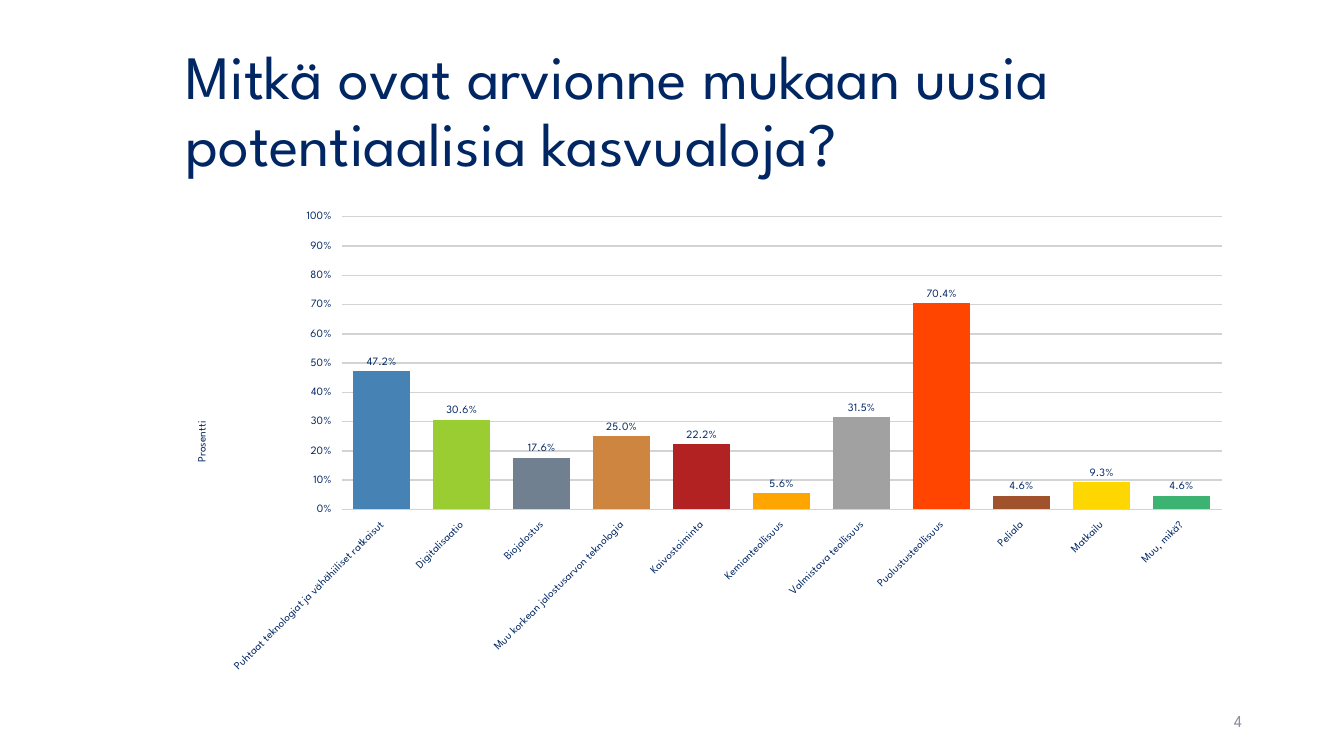
from pptx import Presentation
from pptx.chart.data import CategoryChartData
from pptx.dml.color import RGBColor
from pptx.enum.chart import XL_CHART_TYPE, XL_LABEL_POSITION
from pptx.enum.text import MSO_ANCHOR, PP_ALIGN
from pptx.util import Emu, Pt

COLUMNS = XL_CHART_TYPE.COLUMN_CLUSTERED
OUTSIDE = XL_LABEL_POSITION.OUTSIDE_END
MIDDLE = MSO_ANCHOR.MIDDLE
LEFT, RIGHT = PP_ALIGN.LEFT, PP_ALIGN.RIGHT

NAVY = RGBColor(0x00, 0x26, 0x63)
GREY = RGBColor(0x8C, 0x8E, 0x9F)
GRID = RGBColor(0xD3, 0xD3, 0xD3)

GROWTH_SECTORS = [
    ("Puhtaat teknologiat ja vähähiiliset ratkaisut", 0.472, RGBColor(0x46, 0x82, 0xB4)),
    ("Digitalisaatio", 0.306, RGBColor(0x9A, 0xCD, 0x32)),
    ("Biojalostus", 0.176, RGBColor(0x70, 0x80, 0x90)),
    ("Muu korkean jalostusarvon teknologia", 0.25, RGBColor(0xCD, 0x85, 0x3F)),
    ("Kaivostoiminta", 0.222, RGBColor(0xB2, 0x22, 0x22)),
    ("Kemianteollisuus", 0.056, RGBColor(0xFF, 0xA5, 0x00)),
    ("Valmistava teollisuus", 0.315, RGBColor(0xA1, 0xA1, 0xA1)),
    ("Puolustusteollisuus", 0.704, RGBColor(0xFF, 0x45, 0x00)),
    ("Peliala", 0.046, RGBColor(0xA0, 0x52, 0x2D)),
    ("Matkailu", 0.093, RGBColor(0xFF, 0xD7, 0x00)),
    ("Muu, mikä?", 0.046, RGBColor(0x3C, 0xB3, 0x71)),
]


def px(length):
    return Emu(round(length * 914400 / 100.8))


class SlideBuilder:
    font_name = "League Spartan"

    def __init__(self, deck):
        self.slide = deck.slides.add_slide(deck.slide_layouts[6])

    def style(self, font, size, color=NAVY):
        font.name = self.font_name
        font.size = Pt(size)
        font.bold = False
        font.color.rgb = color

    def text(self, left, top, width, height, words, size, color=NAVY, align=LEFT, spacing=1.0):
        box = self.slide.shapes.add_textbox(px(left), px(top), px(width), px(height))
        frame = box.text_frame
        frame.word_wrap = True
        frame.vertical_anchor = MIDDLE
        frame.text = words
        para = frame.paragraphs[0]
        para.alignment = align
        para.line_spacing = spacing
        self.style(para.runs[0].font, size, color)

    def column_chart(self, left, top, width, height, rows, axis_title):
        data = CategoryChartData()
        data.categories = [name for name, _, _ in rows]
        data.add_series("Series 1", [value for _, value, _ in rows])
        chart = self.slide.shapes.add_chart(
            COLUMNS, px(left), px(top), px(width), px(height), data).chart
        chart.has_legend = False
        chart.has_title = False
        self.style(chart.font, 18)
        self.columns(chart.plots[0], [color for _, _, color in rows])
        for axis in (chart.category_axis, chart.value_axis):
            self.style(axis.tick_labels.font, 8)
            axis.format.line.fill.background()
        chart.category_axis._element.txPr.bodyPr.set("rot", "-2700000")
        self.percent_axis(chart.value_axis, axis_title)

    def columns(self, plot, colors):
        plot.vary_by_categories = False
        plot.gap_width = 40
        plot.overlap = -2
        for index, color in enumerate(colors):
            fill = plot.series[0].points[index].format.fill
            fill.solid()
            fill.fore_color.rgb = color
        plot.has_data_labels = True
        labels = plot.data_labels
        labels.show_value = True
        labels.number_format = "0.0%"
        labels.number_format_is_linked = False
        labels.position = OUTSIDE
        self.style(labels.font, 8)

    def percent_axis(self, axis, title):
        axis.minimum_scale = 0
        axis.maximum_scale = 1
        axis.major_unit = 0.1
        axis.tick_labels.number_format = "0%"
        axis.tick_labels.number_format_is_linked = False
        axis.has_major_gridlines = True
        line = axis.major_gridlines.format.line
        line.color.rgb = GRID
        line.width = Pt(1)
        frame = axis.axis_title.text_frame
        frame.text = title
        frame._txBody.bodyPr.set("rot", "-5400000")
        self.style(frame.paragraphs[0].runs[0].font, 8)


def main():
    deck = Presentation()
    deck.slide_width, deck.slide_height = px(1344), px(756)
    page = SlideBuilder(deck)
    page.text(176, 40, 1067, 146,
              "Mitkä ovat arvionne mukaan uusia potentiaalisia kasvualoja?", 44, spacing=0.9)
    page.column_chart(176, 202, 1067, 480, GROWTH_SECTORS, "Prosentti")
    page.text(950, 701, 302, 40, "4", 12, GREY, RIGHT)
    deck.save("out.pptx")


if __name__ == "__main__":
    main()
